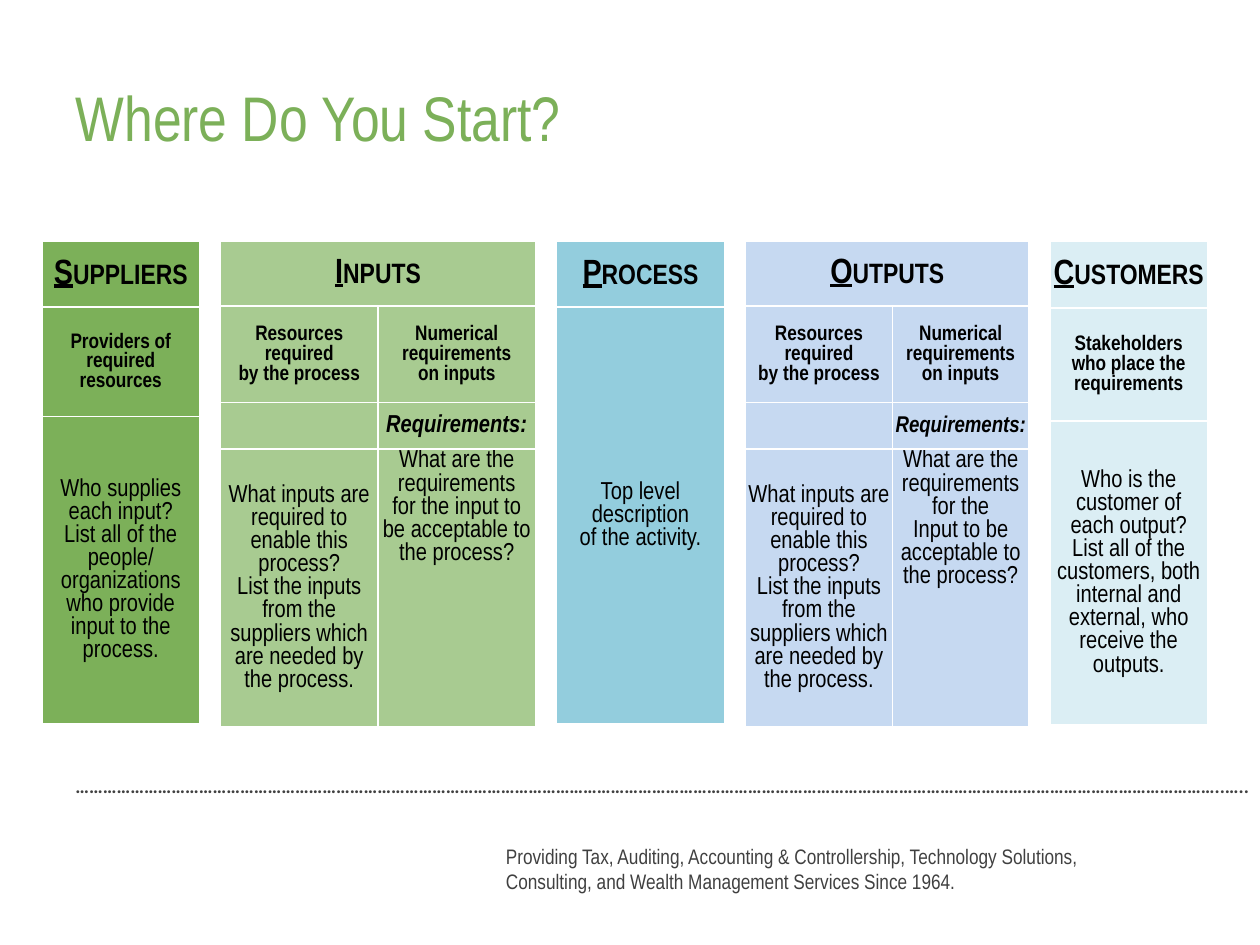
from lxml import etree
from pptx import Presentation
from pptx.enum import text
from pptx.oxml import ns
from pptx.dml.color import RGBColor
from pptx.util import Pt

HUES = {
    "title": "7CB059", "ink": "000000", "grey": "404040", "edge": "FFFFFF",
    "supply": "7CB059", "input": "A8CB91", "process": "93CDDD",
    "output": "C6D9F1", "client": "DBEEF4",
}
TOP, LEFT, GAP = 138, 24, 12
MID, HIGH = text.MSO_ANCHOR.MIDDLE, text.MSO_ANCHOR.TOP

RES = "Resources required\nby the process"
NUM = "Numerical requirements\non inputs"
ASK = "What inputs are required to enable this process?\n"
NEED = "List the inputs from the suppliers which are needed by the process."
PAIR = [37, 55, 26.5, 159]

# Each block: hue, column widths, row heights, rows of cell text, note size
BLOCKS = [
    ("supply", [90], [37.5, 62.5, 175.5], [
        ["SUPPLIERS"],
        ["Providers of\nrequired resources"],
        ["Who supplies\neach input?\nList all of the people/ organizations "
         "who provide input to the process."]], 14),
    ("input", [90, 90], PAIR, [
        ["INPUTS"],
        [RES, NUM],
        ["", "Requirements:"],
        [ASK + NEED, "What are the requirements\nfor the input to\n"
         "be acceptable to\nthe process?"]], 14),
    ("process", [96], [37.5, 238], [
        ["PROCESS"],
        ["Top level\ndescription\nof the activity."]], 14),
    ("output", [84, 78], PAIR, [
        ["OUTPUTS"],
        [RES, NUM],
        ["", "Requirements:"],
        [ASK + NEED, "What are the requirements\nfor the\n"
         "Input to be acceptable to\nthe process?"]], 13),
    ("client", [90], [38, 64.5, 173.5], [
        ["CUSTOMERS"],
        ["Stakeholders\nwho place the requirements"],
        ["Who is the\ncustomer of\neach output?\nList all of the customers, "
         "both internal and external, who receive the\noutputs."]], 14),
]


class Deck:
    face = "Arial Narrow"

    def __init__(self):
        self.prs = Presentation()
        self.prs.slide_width, self.prs.slide_height = Pt(720), Pt(540)
        self.slide = self.prs.slides.add_slide(self.prs.slide_layouts[5])

    def place(self, shape, box):
        shape.left, shape.top, shape.width, shape.height = map(Pt, box)

    def style(self, run, size, hue, bold=False, slant=False, face=None):
        font = run.font
        font.name, font.size = face or self.face, Pt(size)
        font.bold, font.italic = bold, slant
        font.color.rgb = RGBColor.from_string(HUES[hue])

    def title(self, words, box):
        shape = self.slide.shapes.title
        self.place(shape, box)
        frame = shape.text_frame
        frame.text = words
        frame.vertical_anchor = MID
        line = frame.paragraphs[0]
        line.alignment = text.PP_ALIGN.LEFT
        self.style(line.runs[0], 36, "title")

    def label(self, words, box, size, anchor=HIGH, **look):
        frame = self.slide.shapes.add_textbox(*map(Pt, box)).text_frame
        frame.word_wrap = True
        frame.vertical_anchor = anchor
        frame.text = words
        self.style(frame.paragraphs[0].runs[0], size, "grey", **look)

    def edge(self, cell):
        """Put a thin white border on all four sides."""
        props = cell._tc.get_or_add_tcPr()
        for spot, side in enumerate(("lnL", "lnR", "lnT", "lnB")):
            line = etree.Element(ns.qn("a:" + side), w=str(Pt(1)))
            fill = etree.SubElement(line, ns.qn("a:solidFill"))
            etree.SubElement(fill, ns.qn("a:srgbClr"), val=HUES["edge"])
            props.insert(spot, line)

    def cell(self, cell, words, hue, size, **look):
        cell.margin_left = cell.margin_right = cell.margin_top = Pt(0.75)
        cell.margin_bottom = Pt(0)
        cell.vertical_anchor = MID
        cell.fill.solid()
        cell.fill.fore_color.rgb = RGBColor.from_string(HUES[hue])
        self.edge(cell)
        cell.text_frame.text = words
        for line in cell.text_frame.paragraphs:
            line.alignment = text.PP_ALIGN.CENTER
            for run in line.runs:
                self.style(run, size, "ink", **look)

    def head(self, cell, word, hue):
        """Heading with a large underlined first letter."""
        self.cell(cell, word[0], hue, 20, bold=True)
        line = cell.text_frame.paragraphs[0]
        line.runs[0].font.underline = True
        rest = line.add_run()
        rest.text = word[1:]
        self.style(rest, 16, "ink", bold=True)

    def table(self, left, hue, cols, rows, cells, note):
        box = map(Pt, (left, TOP, sum(cols), sum(rows)))
        grid = self.slide.shapes.add_table(len(rows), len(cols), *box).table
        grid.first_row = grid.horz_banding = False
        for col, width in zip(grid.columns, cols):
            col.width = Pt(width)
        for row, height in zip(grid.rows, rows):
            row.height = Pt(height)
        last = len(rows) - 1
        for r, line in enumerate(cells):
            for c, words in enumerate(line):
                cell = grid.cell(r, c)
                if r == 0:
                    self.head(cell, words, hue)
                elif r == last:
                    self.cell(cell, words, hue, 14)
                    cell.vertical_anchor = HIGH if c else MID
                elif r == 1:
                    self.cell(cell, words, hue, 12, bold=True)
                else:
                    self.cell(cell, words, hue, note, bold=True, slant=True)
        if len(cols) > 1:
            self.cell(grid.cell(0, 1), "", hue, 16)
            grid.cell(0, 0).merge(grid.cell(0, 1))


def main():
    deck = Deck()
    deck.title("Where Do You Start?", (36, 21.6, 648, 90))
    left = LEFT
    for hue, cols, rows, cells, note in BLOCKS:
        deck.table(left, hue, cols, rows, cells, note)
        left += sum(cols) + GAP
    deck.label("Providing Tax, Auditing, Accounting & Controllership, Technology "
               "Solutions, Consulting, and Wealth Management Services Since 1964.",
               (282, 470, 372, 53), 12, MID)
    deck.label("…" * 83 + "..…..", (36, 439, 696, 21), 11,
               bold=True, face="Calibri")
    deck.prs.save("out.pptx")


if __name__ == "__main__":
    main()
